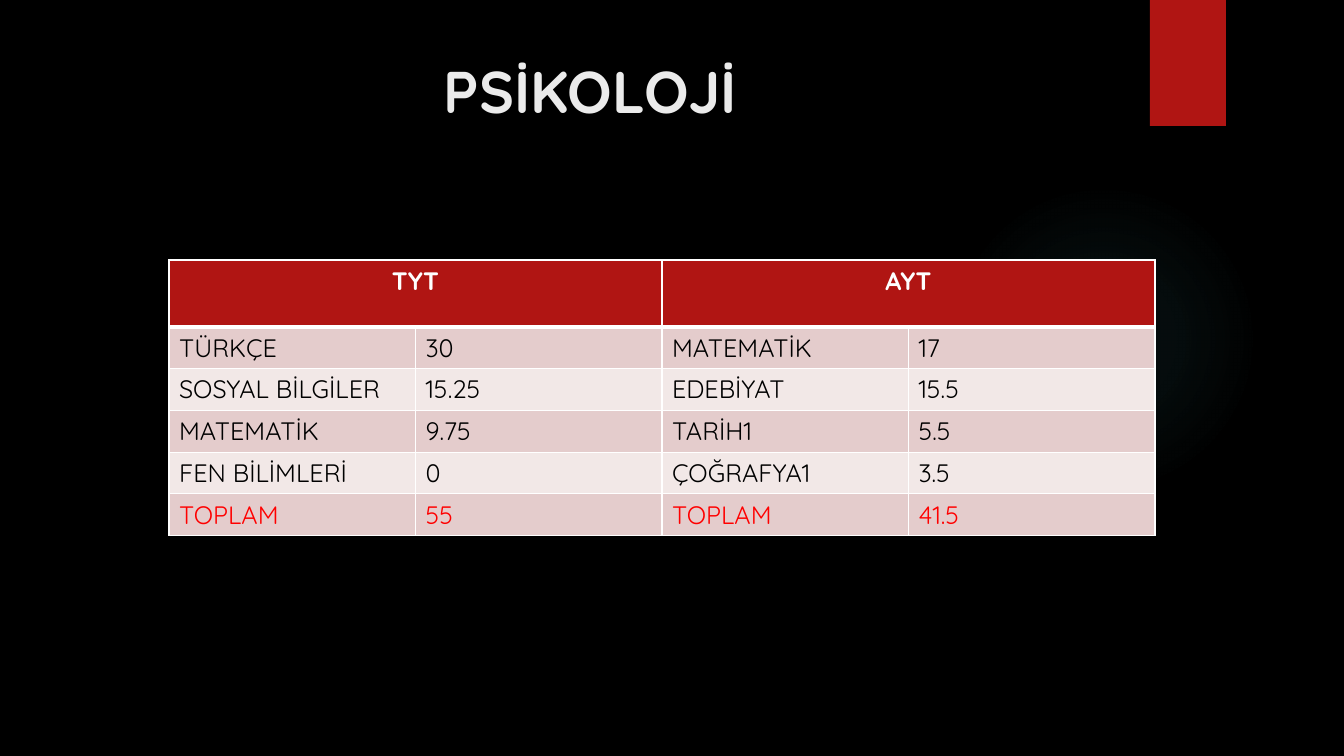
from lxml import etree
from pptx import Presentation
from pptx import util as u
from pptx.dml.color import RGBColor
from pptx.enum import shapes, text
from pptx.oxml import parse_xml
from pptx.oxml.ns import nsdecls, qn

SCALE = 914400 / 100.8
FONT = "Quicksand"
BLACK = RGBColor(0x00, 0x00, 0x00)
WHITE = RGBColor(0xFF, 0xFF, 0xFF)
OFF_WHITE = RGBColor(0xEB, 0xEB, 0xEB)
CRIMSON = RGBColor(0xB0, 0x15, 0x13)
RED = RGBColor(0xFF, 0x00, 0x00)
TEAL = RGBColor(0x50, 0xB9, 0xC1)
BANDS = (RGBColor(0xE4, 0xCC, 0xCC), RGBColor(0xF2, 0xE8, 0xE7))

EXAMS = ("TYT", "AYT")
SCORES = (
    ("TÜRKÇE", "30", "MATEMATİK", "17"),
    ("SOSYAL BİLGİLER", "15.25", "EDEBİYAT", "15.5"),
    ("MATEMATİK", "9.75", "TARİH1", "5.5"),
    ("FEN BİLİMLERİ", "0", "ÇOĞRAFYA1", "3.5"),
    ("TOPLAM", "55", "TOPLAM", "41.5"),
)


def px(length):
    return round(length * SCALE)


def write(frame, words, size=18, color=BLACK, bold=False, align=text.PP_ALIGN.LEFT):
    paragraph = frame.paragraphs[0]
    paragraph.alignment = align
    run = paragraph.add_run()
    run.text = words
    run.font.name = FONT
    run.font.size = u.Pt(size)
    run.font.bold = bold
    run.font.color.rgb = color


def add_plain_shape(slide, kind, box):
    shape = slide.shapes.add_shape(kind, *map(px, box))
    shape.shadow.inherit = False
    shape.line.fill.background()
    return shape


def add_glow(slide, box):
    glow = add_plain_shape(slide, shapes.MSO_SHAPE.OVAL, box)
    glow.fill.gradient()
    gradient = glow.fill._fill._gradFill
    for child in list(gradient):
        gradient.remove(child)
    stops = etree.SubElement(gradient, qn("a:gsLst"))
    for position, opacity in ((0, 7), (36, 6), (69, 0)):
        stop = etree.SubElement(stops, qn("a:gs"), pos=str(position * 1000))
        color = etree.SubElement(stop, qn("a:srgbClr"), val=str(TEAL))
        etree.SubElement(color, qn("a:alpha"), val=str(opacity * 1000))
    circle = etree.SubElement(gradient, qn("a:path"), {"path": "circle"})
    etree.SubElement(circle, qn("a:fillToRect"), dict.fromkeys("ltrb", "50000"))


def add_ribbon(slide, box):
    ribbon = add_plain_shape(slide, shapes.MSO_SHAPE.RECTANGLE, box)
    ribbon.fill.solid()
    ribbon.fill.fore_color.rgb = CRIMSON


def place_title(slide, box, words):
    title = slide.shapes.title
    title.left, title.top, title.width, title.height = map(px, box)
    title.text_frame.vertical_anchor = text.MSO_ANCHOR.TOP
    write(title.text_frame, words, size=42, color=OFF_WHITE, bold=True,
          align=text.PP_ALIGN.CENTER)


def style_cell(cell, fill, top=1, bottom=1):
    """Give a cell white borders, with top and bottom widths in points, and a fill."""
    properties = cell._tc.get_or_add_tcPr()
    for side, width in (("L", 1), ("R", 1), ("T", top), ("B", bottom)):
        properties.append(parse_xml(
            f'<a:ln{side} {nsdecls("a")} w="{u.Pt(width)}"><a:solidFill>'
            f'<a:srgbClr val="{WHITE}"/></a:solidFill></a:ln{side}>'))
    cell.fill.solid()
    cell.fill.fore_color.rgb = fill


def add_score_table(slide, box, header_height):
    left, top, width, height = map(px, box)
    columns = len(SCORES[0])
    table = slide.shapes.add_table(
        len(SCORES) + 1, columns, left, top, width, height).table
    for column in table.columns:
        column.width = width // columns
    table.rows[0].height = px(header_height)
    for row in list(table.rows)[1:]:
        row.height = (height - px(header_height)) // len(SCORES)

    for column in range(columns):
        style_cell(table.cell(0, column), CRIMSON, bottom=3)
    span = columns // len(EXAMS)
    for index, exam in enumerate(EXAMS):
        header = table.cell(0, index * span)
        header.merge(table.cell(0, index * span + span - 1))
        write(header.text_frame, exam, color=WHITE, bold=True,
              align=text.PP_ALIGN.CENTER)

    for row, scores in enumerate(SCORES, start=1):
        color = RED if row == len(SCORES) else BLACK
        for column, words in enumerate(scores):
            cell = table.cell(row, column)
            style_cell(cell, BANDS[(row - 1) % 2], top=3 if row == 1 else 1)
            write(cell.text_frame, words, color=color)


def main():
    deck = Presentation()
    deck.slide_width, deck.slide_height = px(1344), px(756)
    slide = deck.slides.add_slide(deck.slide_layouts[5])
    slide.background.fill.solid()
    slide.background.fill.fore_color.rgb = BLACK
    add_glow(slide, (949, 184, 310, 310))
    add_ribbon(slide, (1150, 0, 76, 126))
    place_title(slide, (72, 50, 1037, 154), "PSİKOLOJİ")
    add_score_table(slide, (169, 260, 986, 275), header_height=67)
    deck.save("out.pptx")


if __name__ == "__main__":
    main()
